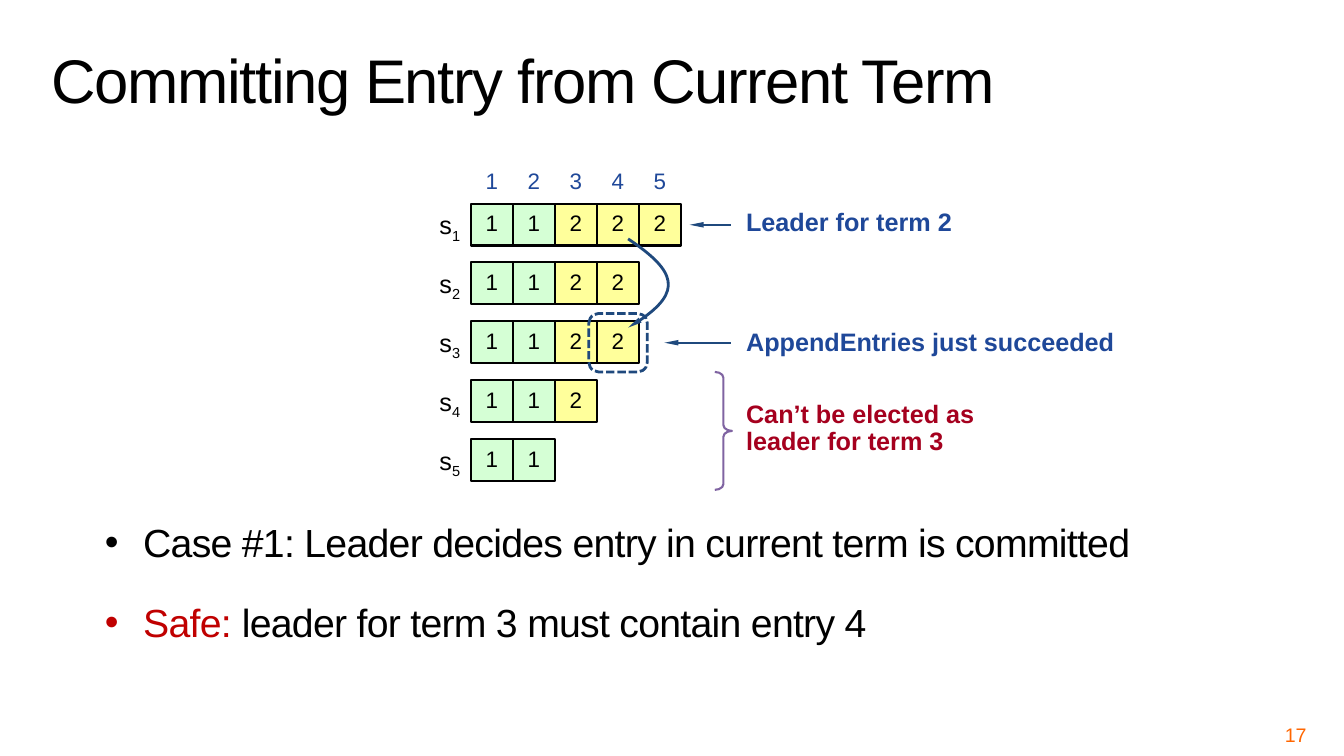
from lxml import etree
from pptx import Presentation
from pptx.dml.color import RGBColor
from pptx.enum.dml import MSO_LINE
from pptx.enum.shapes import MSO_CONNECTOR, MSO_SHAPE
from pptx.enum.text import MSO_ANCHOR, MSO_AUTO_SIZE, PP_ALIGN
from pptx.oxml.ns import qn
from pptx.util import Inches, Pt

LEFT, CENTER, RIGHT = PP_ALIGN.LEFT, PP_ALIGN.CENTER, PP_ALIGN.RIGHT
TOP, MIDDLE, BOTTOM = MSO_ANCHOR.TOP, MSO_ANCHOR.MIDDLE, MSO_ANCHOR.BOTTOM
NO_FIT = MSO_AUTO_SIZE.NONE
STRAIGHT = MSO_CONNECTOR.STRAIGHT
RECTANGLE = MSO_SHAPE.RECTANGLE
ROUNDED = MSO_SHAPE.ROUNDED_RECTANGLE
BRACE = MSO_SHAPE.RIGHT_BRACE
SHORT_DASH = MSO_LINE.SQUARE_DOT

BLACK = RGBColor(0x00, 0x00, 0x00)
BLUE = RGBColor(0x1F, 0x48, 0x99)
NAVY = RGBColor(0x1F, 0x49, 0x7D)
CRIMSON = RGBColor(0xA5, 0x00, 0x1E)
RED = RGBColor(0xC0, 0x00, 0x00)
ORANGE = RGBColor(0xFF, 0x66, 0x00)
PURPLE = RGBColor(0x80, 0x64, 0xA2)
GREEN = RGBColor(0xD5, 0xFF, 0xD5)
YELLOW = RGBColor(0xFF, 0xFF, 0x9B)

TERM_FILLS = {1: GREEN, 2: YELLOW}
SERVER_LOGS = [[1, 1, 2, 2, 2], [1, 1, 2, 2], [1, 1, 2, 2], [1, 1, 2], [1, 1]]
LOG_LEFT, LOG_TOP = 4.67, 2.02
CELL = 5 / 12
ROW_PITCH = 7 / 12
NOTE_LEFT = 7.4


class SlideBuilder:
    font = "Arial"

    def __init__(self, slide):
        self.slide = slide

    def run(self, paragraph, text, size, color, bold=False, spacing=0, baseline=0):
        run = paragraph.add_run()
        run.text = text
        run.font.name = self.font
        run.font.size = Pt(size)
        run.font.bold = bold
        run.font.color.rgb = color
        properties = run._r.get_or_add_rPr()
        if spacing:
            properties.set("spc", str(int(spacing * 100)))
        if baseline:
            properties.set("baseline", str(baseline * 1000))

    def frame(self, shape, align=LEFT, anchor=TOP, inset=0.0):
        frame = shape.text_frame
        frame.word_wrap = True
        frame.auto_size = NO_FIT
        frame.vertical_anchor = anchor
        frame.margin_left = frame.margin_right = Inches(inset)
        frame.margin_top = frame.margin_bottom = Inches(inset)
        frame.paragraphs[0].alignment = align
        return frame

    def title(self, text, left, top, width, height):
        title = self.slide.shapes.title
        title.left, title.top = Inches(left), Inches(top)
        title.width, title.height = Inches(width), Inches(height)
        frame = self.frame(title, anchor=BOTTOM)
        frame.margin_left = frame.margin_right = Inches(0.1)
        frame.margin_top = frame.margin_bottom = Inches(0.05)
        frame.paragraphs[0].line_spacing = 0.8
        self.run(frame.paragraphs[0], text, 44, BLACK, spacing=-1)

    def text(self, left, top, width, height, **layout):
        box = self.slide.shapes.add_textbox(
            Inches(left), Inches(top), Inches(width), Inches(height))
        return self.frame(box, **layout)

    def note(self, lines, top, width, color):
        paragraph = self.text(NOTE_LEFT, top, width, 0.27 * len(lines)).paragraphs[0]
        paragraph.line_spacing = Pt(19)
        for index, line in enumerate(lines):
            if index:
                paragraph.add_line_break()
            self.run(paragraph, line, 18, color, bold=True)

    def bullets(self, items, left, top, width, height):
        frame = self.text(left, top, width, height, inset=0.04)
        for index, (space_before, runs) in enumerate(items):
            paragraph = frame.add_paragraph() if index else frame.paragraphs[0]
            paragraph.space_before = Pt(space_before)
            properties = paragraph._p.get_or_add_pPr()
            properties.set("marL", str(Inches(0.38)))
            properties.set("indent", str(Inches(-0.38)))
            etree.SubElement(properties, qn("a:buFont")).set("typeface", self.font)
            etree.SubElement(properties, qn("a:buChar")).set("char", "•")
            for text, color in runs:
                self.run(paragraph, text, 28, color, spacing=-0.5)

    def shape(self, kind, left, top, width, height, line, weight, fill=None):
        shape = self.slide.shapes.add_shape(
            kind, Inches(left), Inches(top), Inches(width), Inches(height))
        shape.shadow.inherit = False
        self.paint(shape, line, weight, fill)
        return shape

    def paint(self, shape, line, weight, fill=None):
        if fill is None:
            shape.fill.background()
        else:
            shape.fill.solid()
            shape.fill.fore_color.rgb = fill
        shape.line.color.rgb = line
        shape.line.width = Pt(weight)

    def entry(self, term, left, top):
        cell = self.shape(RECTANGLE, left, top, CELL, CELL, BLACK, 1.5, TERM_FILLS[term])
        paragraph = self.frame(cell, align=CENTER, anchor=MIDDLE).paragraphs[0]
        paragraph.line_spacing = Pt(17)
        self.run(paragraph, str(term), 16, BLACK)

    def arrowhead(self, line):
        head = etree.SubElement(line.get_or_add_ln(), qn("a:tailEnd"))
        for key, value in (("type", "triangle"), ("w", "sm"), ("len", "lg")):
            head.set(key, value)

    def arrow(self, start, end, y):
        arrow = self.slide.shapes.add_connector(
            STRAIGHT, Inches(start), Inches(y), Inches(end), Inches(y))
        arrow.line.color.rgb = NAVY
        arrow.line.width = Pt(1.5)
        self.arrowhead(arrow)
        etree.SubElement(arrow._element.spPr, qn("a:effectLst"))

    def curved_arrow(self, start, controls, end, bulge):
        builder = self.slide.shapes.build_freeform(Inches(start[0]), Inches(start[1]))
        corners = [(bulge, (start[1] + end[1]) / 2), end]
        builder.add_line_segments([(Inches(x), Inches(y)) for x, y in corners], close=False)
        curve = builder.convert_to_shape()
        curve.shadow.inherit = False
        self.paint(curve, NAVY, 2)
        self.arrowhead(curve)
        outline = next(curve._element.iter(qn("a:path")))
        for segment in outline.findall(qn("a:lnTo")):
            outline.remove(segment)
        bezier = etree.SubElement(outline, qn("a:cubicBezTo"))
        for x, y in [*controls, end]:
            point = etree.SubElement(bezier, qn("a:pt"))
            point.set("x", str(Inches(x) - curve.left))
            point.set("y", str(Inches(y) - curve.top))


def main():
    deck = Presentation()
    deck.slide_width, deck.slide_height = Inches(13.33), Inches(7.5)
    page = SlideBuilder(deck.slides.add_slide(deck.slide_layouts[5]))

    page.title("Committing Entry from Current Term", 0.41, 0.02, 11.19, 1.17)
    page.bullets([
        (5.6, [("Case #1: Leader decides entry in current term is committed", BLACK)]),
        (24, [("Safe: ", RED), ("leader for term 3 must contain entry 4", BLACK)]),
    ], 1, 5.1, 11.03, 1.86)
    page_number = page.text(9.89, 7.17, 3.11, 0.23, align=RIGHT, anchor=MIDDLE, inset=0.04)
    page.run(page_number.paragraphs[0], "17", 14, ORANGE)

    for column in range(len(SERVER_LOGS[0])):
        log_index = page.text(LOG_LEFT + column * CELL, 1.61, CELL, 0.37,
                              align=CENTER, inset=0.05)
        page.run(log_index.paragraphs[0], str(column + 1), 16, BLUE)

    for row, terms in enumerate(SERVER_LOGS):
        row_top = LOG_TOP + row * ROW_PITCH
        server = page.text(LOG_LEFT - CELL, row_top + 0.06, CELL, 0.3, align=CENTER)
        page.run(server.paragraphs[0], "s", 18, BLACK)
        page.run(server.paragraphs[0], str(row + 1), 18, BLACK, baseline=-25)
        for column, term in enumerate(terms):
            page.entry(term, LOG_LEFT + column * CELL, row_top)

    page.note(["Can’t be elected as", "leader for term 3"], 3.99, 2.77, CRIMSON)
    brace = page.shape(BRACE, 7.09, 3.69, 0.17, 1.17, PURPLE, 1.5)
    brace.adjustments[0] = 0.34

    appended_entry = page.shape(ROUNDED, 5.84, 3.11, 0.58, 0.58, NAVY, 2)
    appended_entry.line.dash_style = SHORT_DASH
    page.note(["AppendEntries just succeeded"], 3.27, 4.19, BLUE)
    page.arrow(7.25, 6.59, 3.4)
    page.curved_arrow((6.23, 2.37), [(6.71, 2.69), (6.78, 2.93)], (6.23, 3.25), 6.62)

    page.note(["Leader for term 2"], 2.08, 2.77, BLUE)
    page.arrow(7.25, 6.84, 2.23)

    deck.save("out.pptx")


if __name__ == "__main__":
    main()
